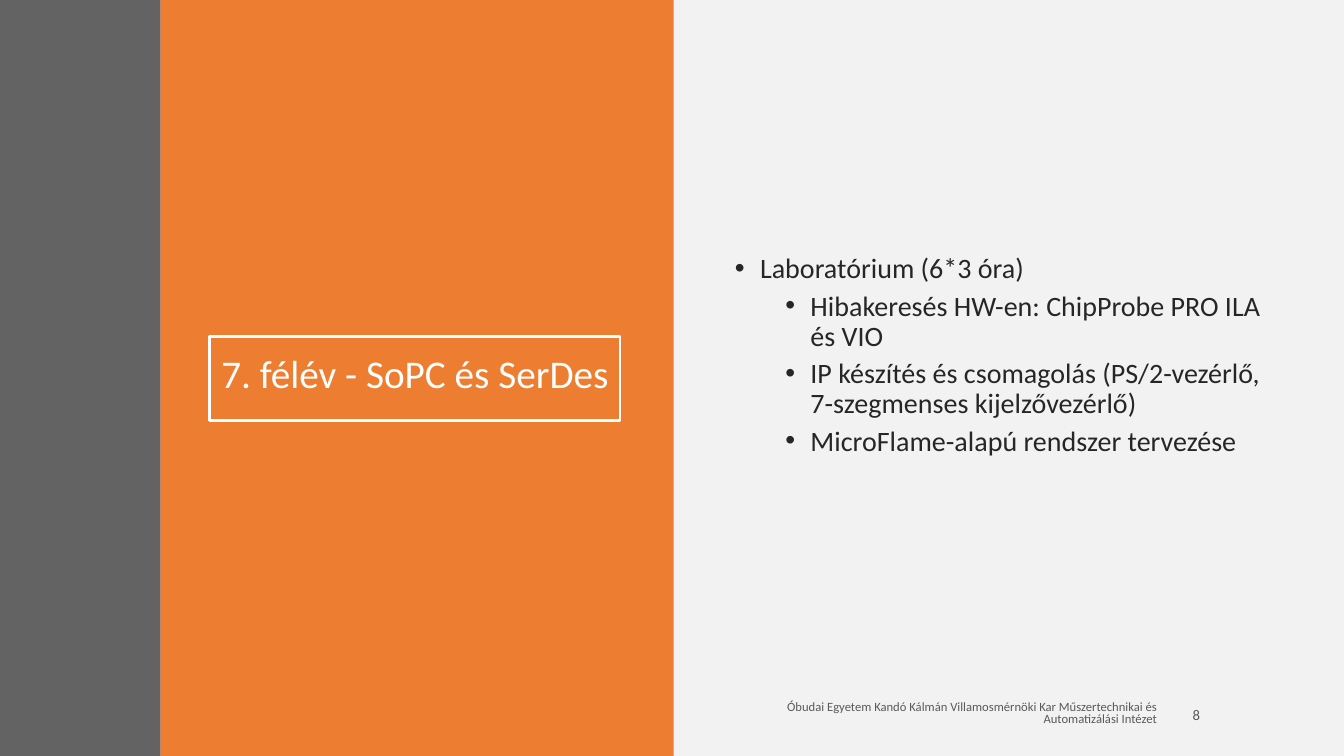
import pptx
import pptx.util
import pptx.dml.color
import pptx.enum.shapes
import pptx.enum.text
import pptx.oxml.ns
import lxml.etree
from dataclasses import dataclass

# Content
TITLE = "7. félév - SoPC és SerDes"
TOPICS = [
    (0, "Laboratórium (6*3 óra)"),
    (1, "Hibakeresés HW-en: ChipProbe PRO ILA és VIO"),
    (1, "IP készítés és csomagolás (PS/2-vezérlő, 7-szegmenses kijelzővezérlő)"),
    (1, "MicroFlame-alapú rendszer tervezése"),
]
FOOTER = ("Óbudai Egyetem Kandó Kálmán Villamosmérnöki Kar "
          "Műszertechnikai és Automatizálási Intézet")
PAGE_NUMBER = "8"


@dataclass(frozen=True)
class Theme:
    font: str = "Calibri"
    paper: str = "F2F2F2"
    accent: str = "ED7D31"
    band: str = "404040"
    band_opacity: int = 80
    white: str = "FFFFFF"
    ink: str = "262626"
    muted: str = "595959"
    title_size: float = 28
    body_size: float = 20
    footer_size: float = 9
    number_size: float = 10.5


THEME = Theme()
ALIGN = pptx.enum.text.PP_ALIGN
Inches, Pt = pptx.util.Inches, pptx.util.Pt

# Layout: left, top, width, height in inches
WIDTH, HEIGHT = 13.33, 7.5
BAND_WIDTH, PANEL_WIDTH = 1.59, 5.09
BAND = (0, 0, BAND_WIDTH, HEIGHT)
PANEL = (BAND_WIDTH, 0, PANEL_WIDTH, HEIGHT)
TITLE_BOX = (2.08, 3.34, 4.07, 0.83)
BODY_BOX = (7.19, 1.22, 5.53, 4.62)
FOOTER_BOX = (7.1, 6.91, 4.47, 0.35)
NUMBER_BOX = (11.73, 6.89, 0.69, 0.4)
INDENT, LEVEL_STEP = 0.25, 0.5


def color(code):
    return pptx.dml.color.RGBColor.from_string(code)


def assign(target, values):
    for name, value in values.items():
        setattr(target, name, value)


def add_rectangle(page, frame, fill=None):
    shape = page.shapes.add_shape(
        pptx.enum.shapes.MSO_SHAPE.RECTANGLE, *map(Inches, frame))
    shape.shadow.inherit = False
    shape.line.fill.background()
    if fill:
        shape.fill.solid()
        shape.fill.fore_color.rgb = color(fill)
    else:
        shape.fill.background()
    return shape


def add_text_box(page, frame):
    return page.shapes.add_textbox(*map(Inches, frame))


def prepare_frame(box, side_inset=0.1):
    assign(box.text_frame, {
        "word_wrap": True,
        "vertical_anchor": pptx.enum.text.MSO_ANCHOR.MIDDLE,
        "margin_left": Inches(side_inset),
        "margin_right": Inches(side_inset),
    })
    return box.text_frame


def write(para, text, size, code, **layout):
    assign(para, layout)
    span = para.add_run()
    span.text = text
    assign(span.font, {"name": THEME.font, "size": Pt(size)})
    span.font.color.rgb = color(code)


def add_bullet(para, level):
    properties = para._p.get_or_add_pPr()
    properties.set("marL", str(Inches(INDENT + level * LEVEL_STEP)))
    properties.set("indent", str(-Inches(INDENT)))
    for tag, key, value in (("a:buFont", "typeface", "Arial"),
                            ("a:buChar", "char", "•")):
        node = lxml.etree.SubElement(properties, pptx.oxml.ns.qn(tag))
        node.set(key, value)


def set_opacity(shape, percent):
    code = shape.fill._xPr.find(".//" + pptx.oxml.ns.qn("a:srgbClr"))
    alpha = lxml.etree.SubElement(code, pptx.oxml.ns.qn("a:alpha"))
    alpha.set("val", str(percent * 1000))


def main():
    deck = pptx.Presentation()
    assign(deck, {"slide_width": Inches(WIDTH), "slide_height": Inches(HEIGHT)})
    page = deck.slides.add_slide(deck.slide_layouts[6])
    page.background.fill.solid()
    page.background.fill.fore_color.rgb = color(THEME.paper)

    # Colour bands
    add_rectangle(page, PANEL, THEME.accent)
    set_opacity(add_rectangle(page, BAND, THEME.band), THEME.band_opacity)

    # Framed title
    title = add_rectangle(page, TITLE_BOX)
    title.line.color.rgb = color(THEME.white)
    title.line.width = Pt(2)
    write(prepare_frame(title, 0.05).paragraphs[0], TITLE, THEME.title_size,
          THEME.white, alignment=ALIGN.CENTER, line_spacing=0.7)

    # Bulleted topics
    body = prepare_frame(add_text_box(page, BODY_BOX))
    for index, (level, text) in enumerate(TOPICS):
        para = body.add_paragraph() if index else body.paragraphs[0]
        write(para, text, THEME.body_size, THEME.ink, level=level,
              line_spacing=0.9, space_before=Pt(5 if level else 10))
        add_bullet(para, level)

    # Footer and page number
    for frame, text, size, layout in (
        (FOOTER_BOX, FOOTER, THEME.footer_size,
         {"alignment": ALIGN.RIGHT, "line_spacing": 0.8}),
        (NUMBER_BOX, PAGE_NUMBER, THEME.number_size, {"alignment": ALIGN.LEFT}),
    ):
        box = prepare_frame(add_text_box(page, frame))
        write(box.paragraphs[0], text, size, THEME.muted, **layout)

    deck.save("out.pptx")


if __name__ == "__main__":
    main()
